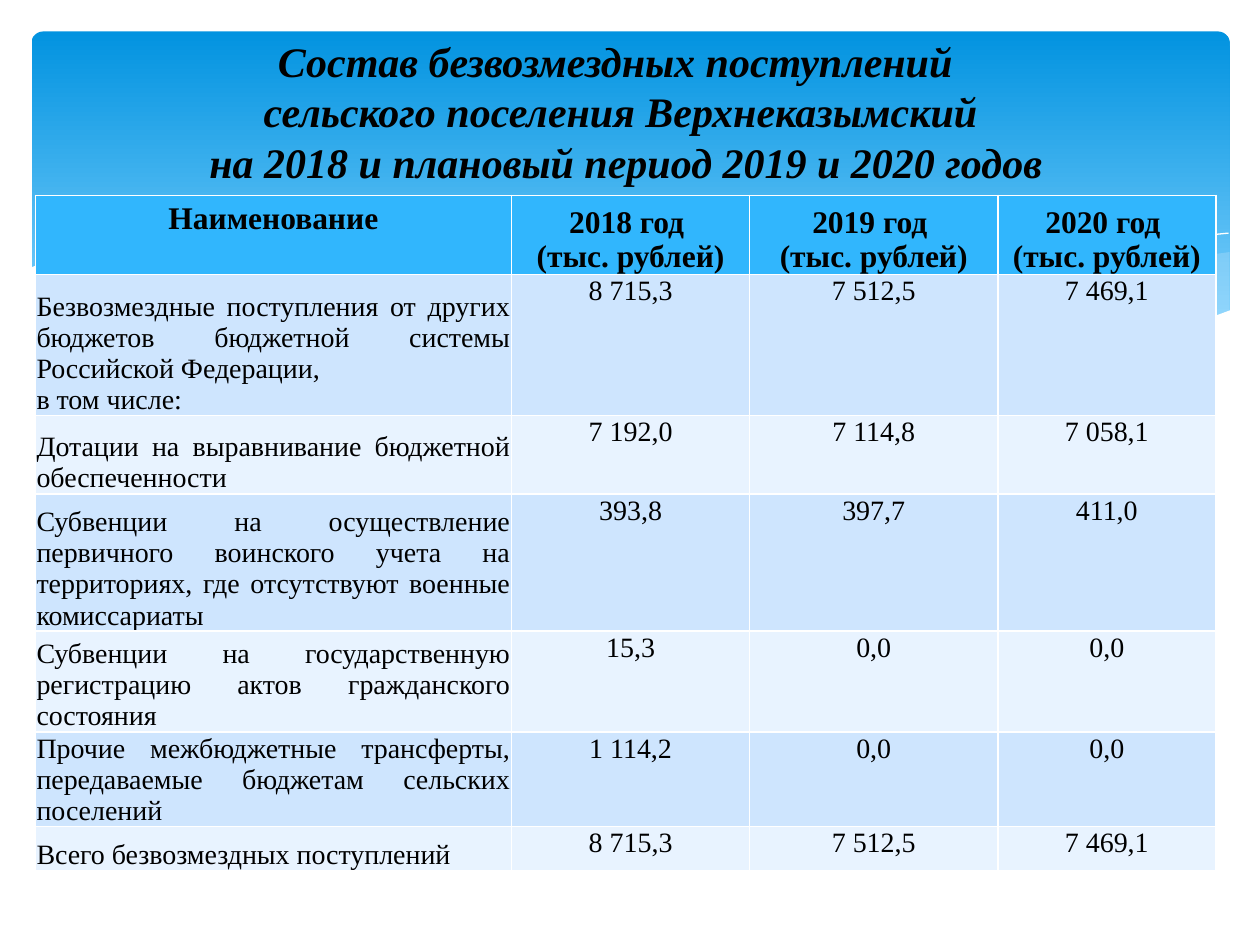
from dataclasses import dataclass
from typing import Optional

from lxml.etree import SubElement
from pptx import Presentation
from pptx.dml.color import RGBColor as RGB
from pptx.enum.shapes import MSO_SHAPE as Shape
from pptx.enum.text import MSO_ANCHOR as Anchor, PP_ALIGN as Align
from pptx.oxml.ns import qn
from pptx.util import Inches, Pt

COLORS = {
    "sky_top": "0293E0", "sky_bottom": "83D3FE", "wave": "C6E7FC",
    "white": "FFFFFF", "text": "000000", "header": "31B6FD",
    "odd": "CEE5FE", "even": "E8F3FF",
}
FONT = "Times New Roman"
TITLE_FONT = {"name": FONT, "size": Pt(24), "bold": True, "italic": True}
HEAD_FONT = {"name": FONT, "size": Pt(18), "bold": True}
CELL_FONT = {"name": FONT, "size": Pt(16), "bold": False}
TIGHT = {
    "margin_left": Inches(0.01), "margin_right": Inches(0.01),
    "margin_top": Inches(0.01), "margin_bottom": 0,
}
TITLE = [
    "Состав безвозмездных поступлений ",
    "сельского поселения Верхнеказымский",
    " на 2018 и плановый период 2019 и 2020 годов",
]
YEARS = (2018, 2019, 2020)
COL_WIDTHS = (3.78, 1.89, 1.97, 1.73)
HEAD_HEIGHT = 0.63


@dataclass
class Wave:
    points: list[tuple[float, float]]
    fill: Optional[str] = None
    alpha: int = 100
    closed: bool = True


@dataclass
class Income:
    name: list[str]
    values: tuple[str, str, str]
    height: float


WAVES = [
    Wave([(9.76, 2), (9.48, 2.04), (9.06, 2.13), (8.61, 2.23), (8.05, 2.37),
          (7.53, 2.48), (7.06, 2.57), (6.61, 2.65), (7.05, 2.71), (7.45, 2.75),
          (7.81, 2.77), (8.14, 2.78), (8.54, 2.76), (8.89, 2.72), (9.21, 2.65),
          (9.49, 2.57), (9.76, 2.47)], "wave", 29),
    Wave([(8.93, 2.73), (8.37, 2.65), (7.75, 2.54), (7.06, 2.4), (6.29, 2.22),
          (5.84, 2.11), (5.41, 2.03), (5.02, 1.96), (4.65, 1.91), (4.2, 1.87),
          (3.8, 1.85), (3.44, 1.86), (3.13, 1.88), (2.86, 1.91), (3.42, 1.99),
          (4.04, 2.11), (4.49, 2.22), (5.3, 2.4), (6.01, 2.55), (6.65, 2.66),
          (7.22, 2.74), (7.73, 2.77), (8.18, 2.78), (8.57, 2.77)], "wave", 40),
    Wave([(3.09, 1.95), (3.44, 1.9), (3.87, 1.87), (4.33, 1.87), (4.89, 1.9),
          (5.56, 1.97), (6.08, 2.04), (6.65, 2.13), (7.27, 2.26), (7.95, 2.41),
          (8.69, 2.61), (9.07, 2.72)], closed=False),
    Wave([(6.13, 2.57), (6.72, 2.41), (7.2, 2.29), (7.76, 2.16), (8.36, 2.04),
          (8.81, 1.96), (9.24, 1.9), (9.75, 1.85)], closed=False),
    Wave([(9.77, 2.46), (9.5, 2.56), (9.2, 2.65), (8.87, 2.71), (8.5, 2.75),
          (8.09, 2.77), (7.61, 2.75), (7.08, 2.7), (6.48, 2.62), (5.79, 2.5),
          (5.03, 2.33), (4.47, 2.2), (3.91, 2.07), (3.4, 1.97), (2.92, 1.9),
          (2.5, 1.86), (2.11, 1.84), (1.61, 1.84), (1.19, 1.87), (0.85, 1.93),
          (0.52, 2.01), (0.23, 2.13), (0.23, 3.29), (9.77, 3.29)], "white"),
]

INCOMES = [
    Income(["Безвозмездные поступления от других бюджетов бюджетной системы "
            "Российской Федерации,", "в том числе: "],
           ("8 715,3", "7 512,5", "7 469,1"), 1.12),
    Income(["Дотации на выравнивание бюджетной обеспеченности "],
           ("7 192,0", "7 114,8", "7 058,1"), 0.62),
    Income(["Субвенции на осуществление первичного воинского учета на "
            "территориях, где отсутствуют военные комиссариаты "],
           ("393,8", "397,7", "411,0"), 1.09),
    Income(["Субвенции на государственную регистрацию актов гражданского "
            "состояния "], ("15,3", "0,0", "0,0"), 0.8),
    Income(["Прочие межбюджетные трансферты, передаваемые бюджетам сельских "
            "поселений"], ("1 114,2", "0,0", "0,0"), 0.59),
    Income(["Всего безвозмездных поступлений "],
           ("8 715,3", "7 512,5", "7 469,1"), 0.35),
]


def color(name: str) -> RGB:
    return RGB.from_string(COLORS[name])


def set_attrs(obj, values: dict) -> None:
    for key, value in values.items():
        setattr(obj, key, value)


def style_run(r, font: dict) -> None:
    set_attrs(r.font, font)
    r.font.color.rgb = color("text")


def draw_sky(shapes) -> None:
    sp = shapes.add_shape(Shape.ROUNDED_RECTANGLE, Inches(0.25), Inches(0.25),
                          Inches(9.51), Inches(2.7))
    sp.adjustments[0] = 0.034
    sp.shadow.inherit = False
    sp.line.fill.background()
    sp.fill.gradient()
    sp.fill.gradient_angle = 270
    stops = (("sky_top", 0), ("sky_bottom", 0.9))
    for stop, (name, position) in zip(sp.fill.gradient_stops, stops):
        stop.color.rgb = color(name)
        stop.position = position


def draw_wave(shapes, wave: Wave) -> None:
    points = [(Inches(x), Inches(y)) for x, y in wave.points]
    builder = shapes.build_freeform(*points[0])
    builder.add_line_segments(points[1:], close=wave.closed)
    sp = builder.convert_to_shape()
    sp.shadow.inherit = False
    if wave.fill is None:
        sp.fill.background()
        sp.line.color.rgb = color("white")
        sp.line.width = 0
        return
    sp.line.fill.background()
    sp.fill.solid()
    sp.fill.fore_color.rgb = color(wave.fill)
    if wave.alpha < 100:
        rgb = sp._element.spPr.find(f"{qn('a:solidFill')}/{qn('a:srgbClr')}")
        SubElement(rgb, qn("a:alpha"), val=str(wave.alpha * 1000))


def fill_cell(cell, lines: list[str], fill: str, font: dict, align=Align.CENTER,
              anchor=Anchor.TOP, margins: dict = TIGHT) -> None:
    cell.fill.solid()
    cell.fill.fore_color.rgb = color(fill)
    set_attrs(cell, {**margins, "vertical_anchor": anchor})
    tf = cell.text_frame
    tf.text = "\n".join(lines)
    for p in tf.paragraphs:
        p.alignment = align
        for r in p.runs:
            style_run(r, font)


def draw_table(shapes) -> None:
    heights = [HEAD_HEIGHT] + [income.height for income in INCOMES]
    table = shapes.add_table(len(heights), len(COL_WIDTHS), Inches(0.28), Inches(1.55),
                             Inches(sum(COL_WIDTHS)), Inches(sum(heights))).table
    for col, width in zip(table.columns, COL_WIDTHS):
        col.width = Inches(width)
    for row, height in zip(table.rows, heights):
        row.height = Inches(height)
    fill_cell(table.cell(0, 0), ["Наименование"], "header", HEAD_FONT, margins={})
    for c, year in enumerate(YEARS, 1):
        fill_cell(table.cell(0, c), [f"{year} год ", "(тыс. рублей)"], "header",
                  HEAD_FONT, anchor=Anchor.BOTTOM)
    for i, income in enumerate(INCOMES, 1):
        band = "odd" if i % 2 else "even"
        fill_cell(table.cell(i, 0), income.name, band, CELL_FONT,
                  Align.JUSTIFY, Anchor.BOTTOM)
        for c, value in enumerate(income.values, 1):
            fill_cell(table.cell(i, c), [value], band, CELL_FONT)


def draw_title(shapes) -> None:
    sp = shapes.title
    set_attrs(sp, {"left": Inches(0.2), "top": Inches(0.21),
                   "width": Inches(9.45), "height": Inches(1.34)})
    tf = sp.text_frame
    set_attrs(tf, {"word_wrap": True, "vertical_anchor": Anchor.MIDDLE})
    p = tf.paragraphs[0]
    p.alignment = Align.CENTER
    for i, line in enumerate(TITLE):
        if i:
            p.add_line_break()
        r = p.add_run()
        r.text = line
        style_run(r, TITLE_FONT)
    shapes._spTree.append(sp._element)


def main() -> None:
    prs = Presentation()
    set_attrs(prs, {"slide_width": Inches(10), "slide_height": Inches(7.5)})
    shapes = prs.slides.add_slide(prs.slide_layouts[5]).shapes
    draw_sky(shapes)
    for wave in WAVES:
        draw_wave(shapes, wave)
    draw_table(shapes)
    draw_title(shapes)
    prs.save("out.pptx")


if __name__ == "__main__":
    main()
